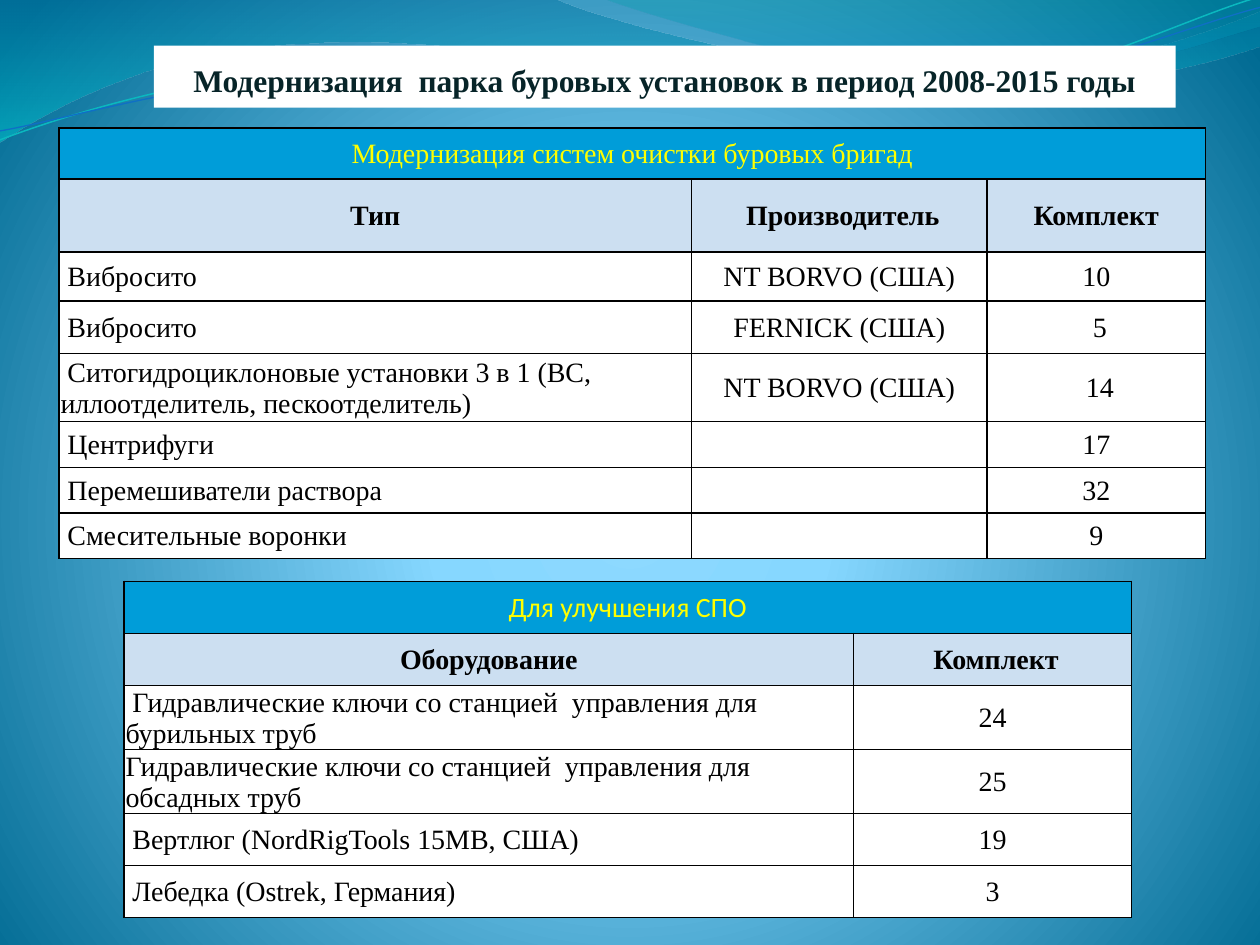
from lxml import etree
from pptx import Presentation
from pptx import util as u
from pptx.dml.color import RGBColor
from pptx.enum import text
from pptx.oxml.ns import nsdecls, qn

COLORS = {
    "title": "072428", "black": "000000", "white": "FFFFFF", "yellow": "FFFF00",
    "band": "009DD9", "header": "CCDFF1",
    "cyan_line": "0AB8BF", "blue_line": "0F6FC6",
}
SERIF = "Times New Roman"
TITLE = "Модернизация  парка буровых установок в период 2008-2015 годы"

# Gradient stops: position %, colour, opacity %
BACKGROUND = [(0, "8DD9FF", 100), (25, "86D7FF", 100), (100, "006A92", 100)]
CIRCLE = '<a:path path="circle"><a:fillToRect l="10000" t="110000" r="10000" b="100000"/></a:path>'
DOWNWARD = '<a:lin ang="5400000" scaled="0"/>'

# Outlines in cm: a start point, then one point per line or three per curve
WAVES = [
    {"stops": [(0, "0074A1", 45), (100, "00C6CF", 55)],
     "outline": [(0, 0), [(11.18, -0.03)],
                 [(12.09, 0.43), (16.87, 1.6), (19.25, 1.6)],
                 [(21.67, 1.6), (24.33, 0.66), (25.4, 0.23)],
                 [(25.43, 0.91)],
                 [(24.97, 1.12), (22.1, 1.93), (18.95, 1.9)],
                 [(15.8, 1.9), (9.7, 0.71), (6.53, 0.86)],
                 [(3.28, 0.91), (1.17, 2.11), (-0.03, 2.87)]]},
    {"stops": [(0, "00A1A9", 30), (80, "008BBF", 45)],
     "outline": [(12.17, -0.03),
                 [(12.93, 0.28), (17.32, 1.57), (19.53, 1.65)],
                 [(21.74, 1.75), (24.41, 0.81), (25.4, 0.53)],
                 [(25.4, 0)]]},
    {"line": ("cyan_line", 0.85),
     "outline": [(0, 2.82),
                 [(1.22, 2.36), (4.01, 1.45), (7.04, 1.32)],
                 [(10.03, 1.19), (15.06, 2.26), (18.11, 2.03)],
                 [(21.16, 1.8), (23.83, 0.38), (25.35, -0.05)]]},
    {"line": ("blue_line", 0.75),
     "outline": [(0, 2.64),
                 [(1.19, 2.44), (4.17, 1.55), (7.19, 1.42)],
                 [(10.24, 1.3), (15.16, 2.13), (18.21, 1.9)],
                 [(21.23, 1.7), (23.9, 0.53), (25.4, 0.15)]]},
]

TABLES = [
    {"at": (1.19, 2.58), "cols": [12.75, 5.96, 4.4],
     "heights": [1.03, 1.47, 0.99, 1.06, 1.37, 0.92, 0.92, 0.92],
     "caption": "Модернизация систем очистки буровых бригад", "caption_font": SERIF,
     "rows": [
         ("Тип", " Производитель", "Комплект"),
         (" Вибросито", "NT BORVO (США)", "10"),
         (" Вибросито", "FERNICK (США)", " 5"),
         (" Ситогидроциклоновые установки 3 в 1 (ВС,  иллоотделитель, пескоотделитель)",
          "NT BORVO (США)", " 14"),
         (" Центрифуги", "", "17"),
         (" Перемешиватели раствора", "", "32"),
         (" Смесительные воронки", "", "9")]},
    {"at": (2.5, 11.72), "cols": [14.71, 5.6],
     "heights": [1.05, 1.05, 1.29, 1.29, 1.05, 1.05],
     "caption": "Для улучшения СПО", "caption_font": "Calibri",
     "rows": [
         ("Оборудование", " Комплект"),
         (" Гидравлические ключи со станцией  управления для бурильных труб", "24"),
         ("Гидравлические ключи со станцией  управления для обсадных труб", "25"),
         (" Вертлюг (NordRigTools 15MB, США)", "19"),
         (" Лебедка (Ostrek, Германия)", "3")]},
]


def rgb(name):
    return RGBColor.from_string(COLORS[name])


def make_gradient(solid, stops, direction):
    """Replace a solidFill element with a gradient."""
    gs = "".join(
        f'<a:gs pos="{pos * 1000}"><a:srgbClr val="{color}">'
        f'<a:alpha val="{alpha * 1000}"/></a:srgbClr></a:gs>'
        for pos, color, alpha in stops)
    grad = etree.fromstring(
        f'<a:gradFill {nsdecls("a")} rotWithShape="1"><a:gsLst>{gs}</a:gsLst>{direction}</a:gradFill>')
    solid.getparent().replace(solid, grad)


def bend(sp, segments):
    """Turn the straight segments that have control points into cubic curves."""
    lines = sp._element.xpath(".//a:lnTo")
    for line, segment in zip(lines, segments):
        if len(segment) == 3:
            points = "".join(
                f'<a:pt x="{u.Cm(x) - sp.left}" y="{u.Cm(y) - sp.top}"/>' for x, y in segment)
            curve = etree.fromstring(f'<a:cubicBezTo {nsdecls("a")}>{points}</a:cubicBezTo>')
            line.getparent().replace(line, curve)


def add_wave(s, wave):
    start, *segments = wave["outline"]
    builder = s.shapes.build_freeform(*map(u.Cm, start))
    ends = [tuple(map(u.Cm, segment[-1])) for segment in segments]
    builder.add_line_segments(ends, close="stops" in wave)
    sp = builder.convert_to_shape()
    bend(sp, segments)
    sp.shadow.inherit = False
    if "stops" in wave:
        sp.line.fill.background()
        sp.fill.solid()
        make_gradient(sp._element.spPr.find(qn("a:solidFill")), wave["stops"], DOWNWARD)
    else:
        color, width = wave["line"]
        sp.fill.background()
        sp.line.color.rgb = rgb(color)
        sp.line.width = u.Pt(width)


def write(tf, words, size, color, bold=False, font=SERIF, align=text.PP_ALIGN.CENTER):
    p = tf.paragraphs[0]
    p.alignment = align
    if words:
        r = p.add_run()
        r.text = words
        r.font.name, r.font.size, r.font.bold = font, u.Pt(size), bold
        r.font.color.rgb = rgb(color)


def style_cell(cell, fill):
    tc_pr = cell._tc.get_or_add_tcPr()
    for side in ("lnL", "lnR", "lnT", "lnB"):
        tc_pr.append(etree.fromstring(
            f'<a:{side} {nsdecls("a")} w="12700"><a:solidFill>'
            f'<a:srgbClr val="{COLORS["black"]}"/></a:solidFill></a:{side}>'))
    cell.fill.solid()
    cell.fill.fore_color.rgb = rgb(fill)
    cell.margin_left = cell.margin_right = cell.margin_top = u.Cm(0.03)
    cell.margin_bottom = 0
    cell.vertical_anchor = text.MSO_ANCHOR.MIDDLE


def add_grid(s, data):
    cols, heights = data["cols"], data["heights"]
    size = [u.Cm(sum(cols)), u.Cm(sum(heights))]
    table = s.shapes.add_table(len(heights), len(cols), *map(u.Cm, data["at"]), *size).table
    for column, width in zip(table.columns, cols):
        column.width = u.Cm(width)
    for row, height in zip(table.rows, heights):
        row.height = u.Cm(height)

    table.cell(0, 0).merge(table.cell(0, len(cols) - 1))
    for c in range(len(cols)):
        style_cell(table.cell(0, c), "band")
    write(table.cell(0, 0).text_frame, data["caption"], 16, "yellow", font=data["caption_font"])

    for i, row in enumerate(data["rows"], 1):
        header = i == 1
        for j, words in enumerate(row):
            cell = table.cell(i, j)
            style_cell(cell, "header" if header else "white")
            left = j == 0 and not header
            write(cell.text_frame, words, 16, "black", bold=header,
                  align=text.PP_ALIGN.LEFT if left else text.PP_ALIGN.CENTER)


def add_title(s):
    sp = s.shapes.title
    s.shapes._spTree.append(sp._element)  # in front of the waves
    sp.left, sp.top, sp.width, sp.height = map(u.Cm, (3.1, 0.92, 20.6, 1.25))
    sp.fill.solid()
    sp.fill.fore_color.rgb = rgb("white")
    tf = sp.text_frame
    tf.margin_left = tf.margin_right = tf.margin_bottom = 0
    tf.margin_top = u.Cm(0.13)
    tf.vertical_anchor = text.MSO_ANCHOR.MIDDLE
    write(tf, TITLE, 18, "title", bold=True)


def main():
    prs = Presentation()
    prs.slide_width, prs.slide_height = u.Cm(25.4), u.Cm(19.05)
    s = prs.slides.add_slide(prs.slide_layouts[5])
    s.background.fill.solid()
    make_gradient(s.element.xpath(".//p:bgPr/a:solidFill")[0], BACKGROUND, CIRCLE)
    for wave in WAVES:
        add_wave(s, wave)
    add_title(s)
    for data in TABLES:
        add_grid(s, data)
    prs.save("out.pptx")


if __name__ == "__main__":
    main()
